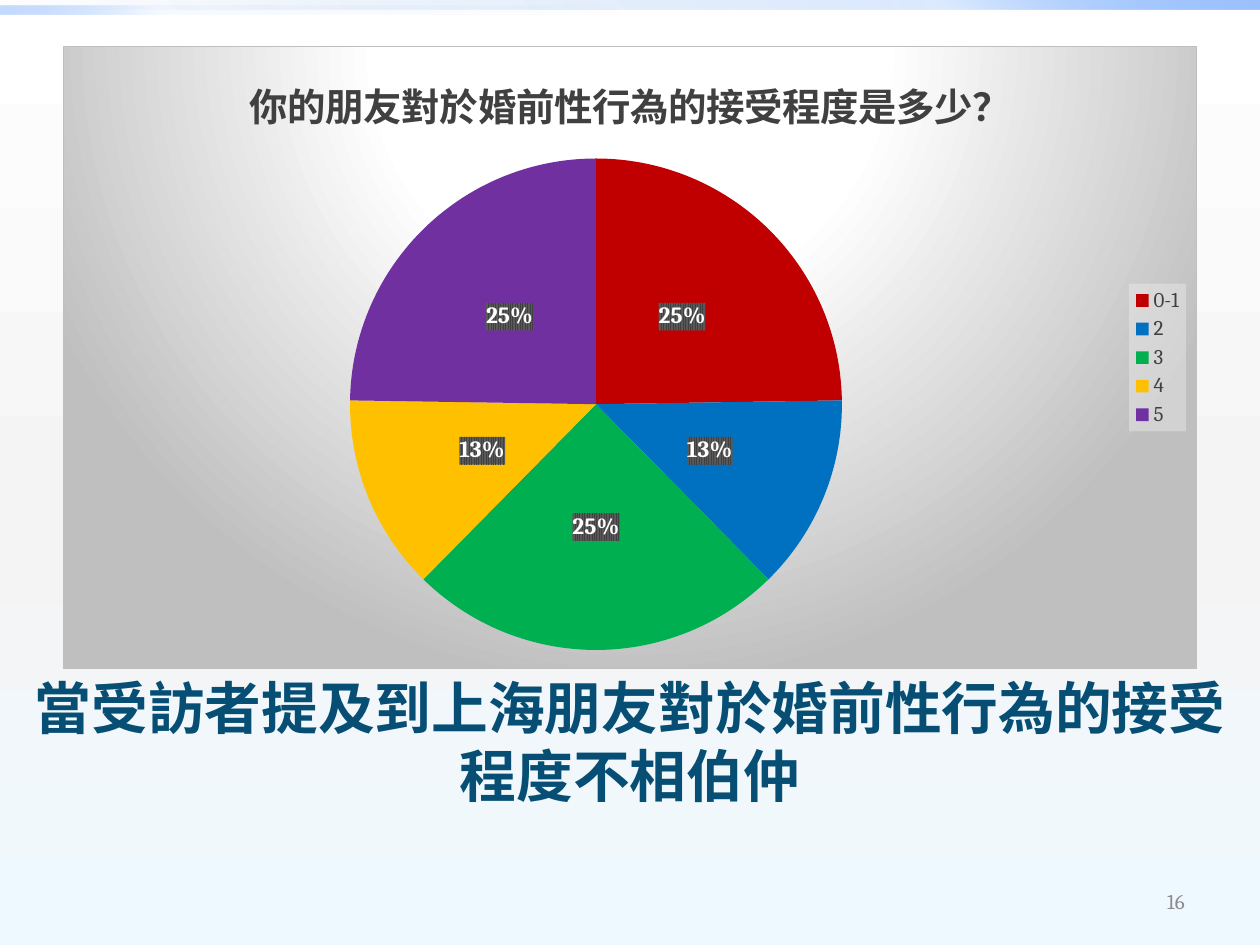
from pptx import Presentation
from pptx.chart.data import CategoryChartData
from pptx.dml.color import RGBColor
from pptx.enum.chart import XL_CHART_TYPE, XL_LABEL_POSITION, XL_LEGEND_POSITION
from pptx.enum.shapes import MSO_SHAPE
from pptx.enum.text import MSO_ANCHOR, PP_ALIGN
from pptx.oxml import parse_xml
from pptx.oxml.ns import nsdecls, qn
from pptx.util import Pt

WHITE = RGBColor(0xFF, 0xFF, 0xFF)
PALE = RGBColor(0xF4, 0xF4, 0xF4)
ICE = RGBColor(0xEE, 0xF9, 0xFF)
DEEP = RGBColor(0x00, 0x58, 0xB7)
AZURE = RGBColor(0x4F, 0x95, 0xFF)
SKY = RGBColor(0x9E, 0xC2, 0xFF)
NAVY = RGBColor(0x06, 0x4E, 0x74)
DARK = RGBColor(0x40, 0x40, 0x40)
SLATE = RGBColor(0x59, 0x59, 0x59)
GRAY = RGBColor(0x8C, 0x8C, 0x8C)
SILVER = RGBColor(0xBF, 0xBF, 0xBF)
MIST = RGBColor(0xF2, 0xF2, 0xF2)
SLICES = [
    RGBColor(0xC0, 0x00, 0x00),
    RGBColor(0x00, 0x70, 0xC0),
    RGBColor(0x00, 0xB0, 0x50),
    RGBColor(0xFF, 0xC0, 0x00),
    RGBColor(0x70, 0x30, 0xA0),
]

CIRCLE = ('<a:path path="circle"><a:fillToRect l="50000" t="-80000" '
          'r="50000" b="180000"/></a:path>')


def tint(color, alpha=100):
    return f'<a:srgbClr val="{color}"><a:alpha val="{alpha * 1000}"/></a:srgbClr>'


def line(angle):
    return f'<a:lin ang="{angle * 60000}" scaled="0"/>'


def blend(stops, shade):
    """Return gradient XML from (percent, color[, alpha]) stops."""
    marks = "".join(f'<a:gs pos="{pos * 1000}">{tint(*color)}</a:gs>'
                    for pos, *color in stops)
    return (f'<a:gradFill {nsdecls("a")} rotWithShape="1">'
            f'<a:gsLst>{marks}</a:gsLst>{shade}</a:gradFill>')


def repaint(root, fill):
    """Replace the first solid fill under root."""
    old = next(root.iter(qn("a:solidFill")))
    old.getparent().replace(old, parse_xml(fill))


def skin(part, inner):
    """Give a chart part its fill and border, ahead of its text format."""
    part.find(qn("c:txPr")).addprevious(
        parse_xml(f'<c:spPr {nsdecls("c", "a")}>{inner}</c:spPr>'))


def style(font, size, color, face="Cambria", bold=False):
    font.size, font.name, font.bold = Pt(size), face, bold
    font.color.rgb = color


def write(frame, text, align=PP_ALIGN.CENTER, **form):
    frame.word_wrap = True
    frame.vertical_anchor = MSO_ANCHOR.MIDDLE
    para = frame.paragraphs[0]
    para.alignment = align
    run = para.add_run()
    run.text = text
    style(run.font, **form)


class Deck:
    """Holds the presentation and its current slide."""

    def __init__(self):
        self.prs = Presentation()
        self.prs.slide_width, self.prs.slide_height = Pt(720), Pt(540)
        self.slide = self.prs.slides.add_slide(self.prs.slide_layouts[5])

    def back(self, stops, angle):
        self.slide.background.fill.solid()
        repaint(self.slide.element, blend(stops, line(angle)))

    def bar(self, box, stops, angle):
        shape = self.slide.shapes.add_shape(MSO_SHAPE.RECTANGLE, *map(Pt, box))
        shape.shadow.inherit = False
        shape.line.fill.background()
        shape.fill.solid()
        repaint(shape.element, blend(stops, line(angle)))

    def title(self, box, text, **form):
        shape = self.slide.shapes.title
        shape.left, shape.top, shape.width, shape.height = map(Pt, box)
        shape.text_frame.margin_bottom = Pt(12)
        write(shape.text_frame, text, **form)

    def text(self, box, text, **form):
        shape = self.slide.shapes.add_textbox(*map(Pt, box))
        write(shape.text_frame, text, **form)

    def pie(self, box, name, cats, vals):
        data = CategoryChartData()
        data.categories = cats
        data.add_series(name, vals)
        chart = self.slide.shapes.add_chart(
            XL_CHART_TYPE.PIE, *map(Pt, box), data).chart
        chart.font.size, chart.font.name = Pt(10), "Cambria"
        skin(chart.element,
             blend([(0, WHITE), (39, WHITE), (100, SILVER)], CIRCLE)
             + f'<a:ln w="9525"><a:solidFill>{tint(SILVER)}</a:solidFill></a:ln>')

        chart.has_title = True
        write(chart.chart_title.text_frame, name, size=22, color=DARK, bold=True)
        chart.chart_title.include_in_layout = False

        chart.has_legend = True
        legend = chart.legend
        legend.position = XL_LEGEND_POSITION.RIGHT
        legend.include_in_layout = False
        style(legend.font, 12, DARK)
        skin(next(chart.element.iter(qn("c:legend"))),
             f'<a:solidFill>{tint(MIST, 39)}</a:solidFill>')

        plot = chart.plots[0]
        plot.vary_by_categories = True
        for i, color in enumerate(SLICES):
            point = plot.series[0].points[i].format
            point.fill.solid()
            point.fill.fore_color.rgb = color
            point.line.fill.background()

        plot.has_data_labels = True
        labels = plot.data_labels
        labels.show_percentage, labels.show_value = True, False
        labels.number_format, labels.number_format_is_linked = "0%", False
        labels.position = XL_LABEL_POSITION.CENTER
        style(labels.font, 13.3, WHITE, bold=True)
        skin(next(chart.element.iter(qn("c:dLbls"))),
             f'<a:pattFill prst="ltVert"><a:fgClr>{tint(DARK)}</a:fgClr>'
             f'<a:bgClr>{tint(SLATE)}</a:bgClr></a:pattFill>')

        area = next(chart.element.iter(qn("c:plotArea")))
        for old in area.findall(qn("c:layout")):
            area.remove(old)
        spots = "".join(f'<c:{tag} val="{val}"/>' for tag, val in (
            ("layoutTarget", "inner"), ("xMode", "edge"), ("yMode", "edge"),
            ("x", 0.25), ("y", 0.18), ("w", 0.44), ("h", 0.79)))
        area.insert(0, parse_xml(
            f'<c:layout {nsdecls("c")}><c:manualLayout>{spots}'
            '</c:manualLayout></c:layout>'))


def main():
    deck = Deck()
    deck.back([(0, WHITE), (55, PALE), (100, ICE)], 90)
    deck.bar((0, 0, 720, 5.5), [(0, DEEP, 0), (75, AZURE, 20), (100, SKY)], 315)
    deck.bar((0, 3, 360, 5.5), [(0, DEEP, 0), (75, AZURE, 5), (100, SKY, 60)], 135)
    deck.title((0, 382.5, 720, 90),
               "當受訪者提及到上海朋友對於婚前性行為的接受程度不相伯仲",
               size=32.4, color=NAVY, face="Calibri", bold=True)
    deck.pie((36, 26.25, 648, 356.25), "你的朋友對於婚前性行為的接受程度是多少？",
             ["0-1", "2", "3", "4", "5"], [25, 13, 25, 13, 25])
    deck.text((516, 500.5, 168, 28.5), "16", align=PP_ALIGN.RIGHT,
              size=12, color=GRAY)
    deck.prs.save("out.pptx")


if __name__ == "__main__":
    main()
